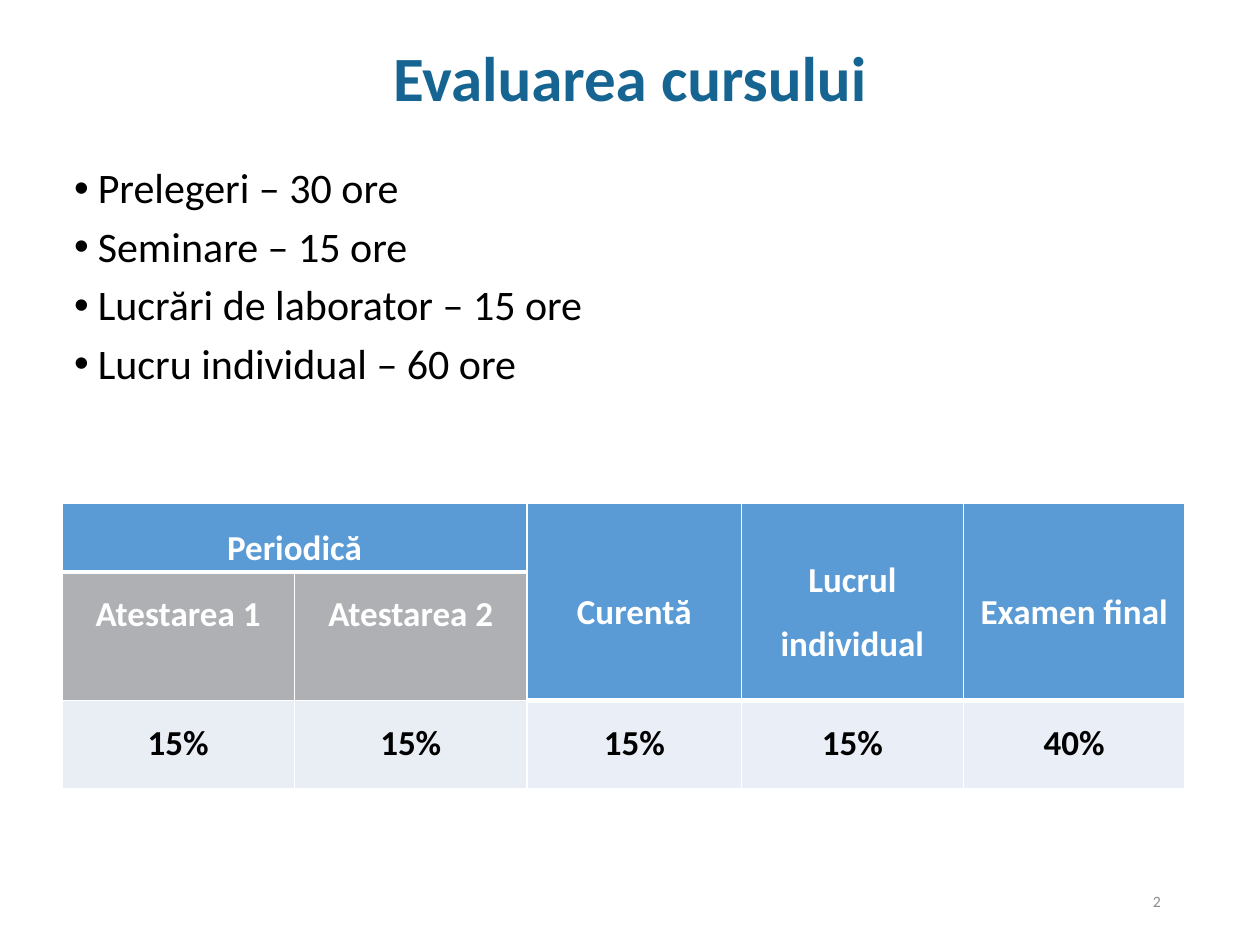
from lxml.etree import SubElement
from pptx import Presentation
from pptx.dml.color import RGBColor
from pptx.enum.text import MSO_ANCHOR, MSO_AUTO_SIZE, PP_ALIGN
from pptx.oxml.ns import qn
from pptx.util import Pt

COLOURS = {
    "title": "166491",
    "text": "000000",
    "number": "8C8C8C",
    "white": "FFFFFF",
    "header": "5B9BD5",
    "subheader": "AEB0B3",
    "periodic": "E9EDF4",
    "value": "EAEFF7",
}
FORMATS = {
    "title": {"size": Pt(36), "bold": True},
    "body": {"size": Pt(24), "bold": False},
    "cell": {"size": Pt(20), "bold": True},
    "number": {"size": Pt(9), "bold": False},
}
HOURS = [
    "Prelegeri – 30 ore",
    "Seminare – 15 ore",
    "Lucrări de laborator – 15 ore",
    "Lucru individual – 60 ore",
]
GRADES = [
    ["Periodică", "", "Curentă", "Lucrul individual", "Examen final"],
    ["Atestarea 1", "Atestarea 2", "", "", ""],
    ["15%", "15%", "15%", "15%", "40%"],
]
FILLS = [
    ["header"] * 5,
    ["subheader"] * 2 + ["header"] * 3,
    ["periodic"] * 2 + ["value"] * 3,
]
MERGES = [((0, 0), (0, 1))] + [((0, column), (1, column)) for column in (2, 3, 4)]
COLUMN_WIDTHS = [133, 133, 122.5, 126.75, 126.75]
ROW_HEIGHTS = [39.6, 40.3, 50.4]


def rgb(name):
    return RGBColor.from_string(COLOURS[name])


def format_paragraph(paragraph, style, colour, **settings):
    for name, value in settings.items():
        setattr(paragraph, name, value)
    for name, value in {"name": "Calibri", **FORMATS[style]}.items():
        setattr(paragraph.font, name, value)
    paragraph.font.color.rgb = rgb(colour)


def set_frame(frame, anchor):
    settings = {"word_wrap": True, "auto_size": MSO_AUTO_SIZE.NONE, "vertical_anchor": anchor}
    for name, value in settings.items():
        setattr(frame, name, value)


def add_text_box(slide, box, anchor):
    frame = slide.shapes.add_textbox(*map(Pt, box)).text_frame
    set_frame(frame, anchor)
    return frame


def set_title(slide, box, text):
    title = slide.shapes.title
    title.left, title.top, title.width, title.height = map(Pt, box)
    set_frame(title.text_frame, MSO_ANCHOR.MIDDLE)
    title.text_frame.text = text
    format_paragraph(title.text_frame.paragraphs[0], "title", "title",
                     alignment=PP_ALIGN.CENTER, line_spacing=0.9)


def add_bullet_list(slide, box, items):
    frame = add_text_box(slide, box, MSO_ANCHOR.TOP)
    frame.text = "\n".join(items)
    for index, paragraph in enumerate(frame.paragraphs):
        properties = paragraph._p.get_or_add_pPr()
        properties.set("marL", str(Pt(13.5)))
        properties.set("indent", str(-Pt(13.5)))
        SubElement(properties, qn("a:buFont"), typeface="Arial")
        SubElement(properties, qn("a:buChar"), char="•")
        format_paragraph(paragraph, "body", "text", line_spacing=0.9,
                         space_before=Pt(7.5 if index else 0))


def add_borders(cell, bottom_width):
    properties = cell._tc.get_or_add_tcPr()
    for side, width in {"L": 1, "R": 1, "T": 1, "B": bottom_width}.items():
        line = SubElement(properties, qn(f"a:ln{side}"), w=str(Pt(width)))
        fill = SubElement(line, qn("a:solidFill"))
        SubElement(fill, qn("a:srgbClr"), val=COLOURS["white"])


def format_cell(cell, text, fill, bottom_width):
    add_borders(cell, bottom_width)
    cell.fill.solid()
    cell.fill.fore_color.rgb = rgb(fill)
    margins = {"margin_left": 5, "margin_right": 5, "margin_top": 0, "margin_bottom": 0}
    for name, value in margins.items():
        setattr(cell, name, Pt(value))
    is_header = fill == "header"
    cell.vertical_anchor = MSO_ANCHOR.MIDDLE if is_header else MSO_ANCHOR.TOP
    cell.text = text
    colour = "white" if is_header or fill == "subheader" else "text"
    format_paragraph(cell.text_frame.paragraphs[0], "cell", colour,
                     alignment=PP_ALIGN.CENTER, line_spacing=1.5)


def add_grade_table(slide, left, top):
    size = (sum(COLUMN_WIDTHS), sum(ROW_HEIGHTS))
    table = slide.shapes.add_table(
        len(GRADES), len(COLUMN_WIDTHS), *map(Pt, (left, top, *size))).table
    for column, width in zip(table.columns, COLUMN_WIDTHS):
        column.width = Pt(width)
    for row, height in zip(table.rows, ROW_HEIGHTS):
        row.height = Pt(height)
    for row, (texts, fills) in enumerate(zip(GRADES, FILLS)):
        for column, (text, fill) in enumerate(zip(texts, fills)):
            format_cell(table.cell(row, column), text, fill, 3 if fill == "header" else 1)
    for first, last in MERGES:
        table.cell(*first).merge(table.cell(*last))


def add_slide_number(slide, box, number):
    frame = add_text_box(slide, box, MSO_ANCHOR.MIDDLE)
    frame.text = str(number)
    format_paragraph(frame.paragraphs[0], "number", "number", alignment=PP_ALIGN.RIGHT)


def main():
    presentation = Presentation()
    presentation.slide_width, presentation.slide_height = Pt(720), Pt(540)
    slide = presentation.slides.add_slide(presentation.slide_layouts[5])
    set_title(slide, (36, 21.6, 648, 49.7), "Evaluarea cursului")
    add_bullet_list(slide, (35.3, 92.2, 658.8, 356.4), HOURS)
    add_grade_table(slide, 35.3, 287.3)
    add_slide_number(slide, (508.5, 500.5, 162, 28.75), 2)
    presentation.save("out.pptx")


if __name__ == "__main__":
    main()
